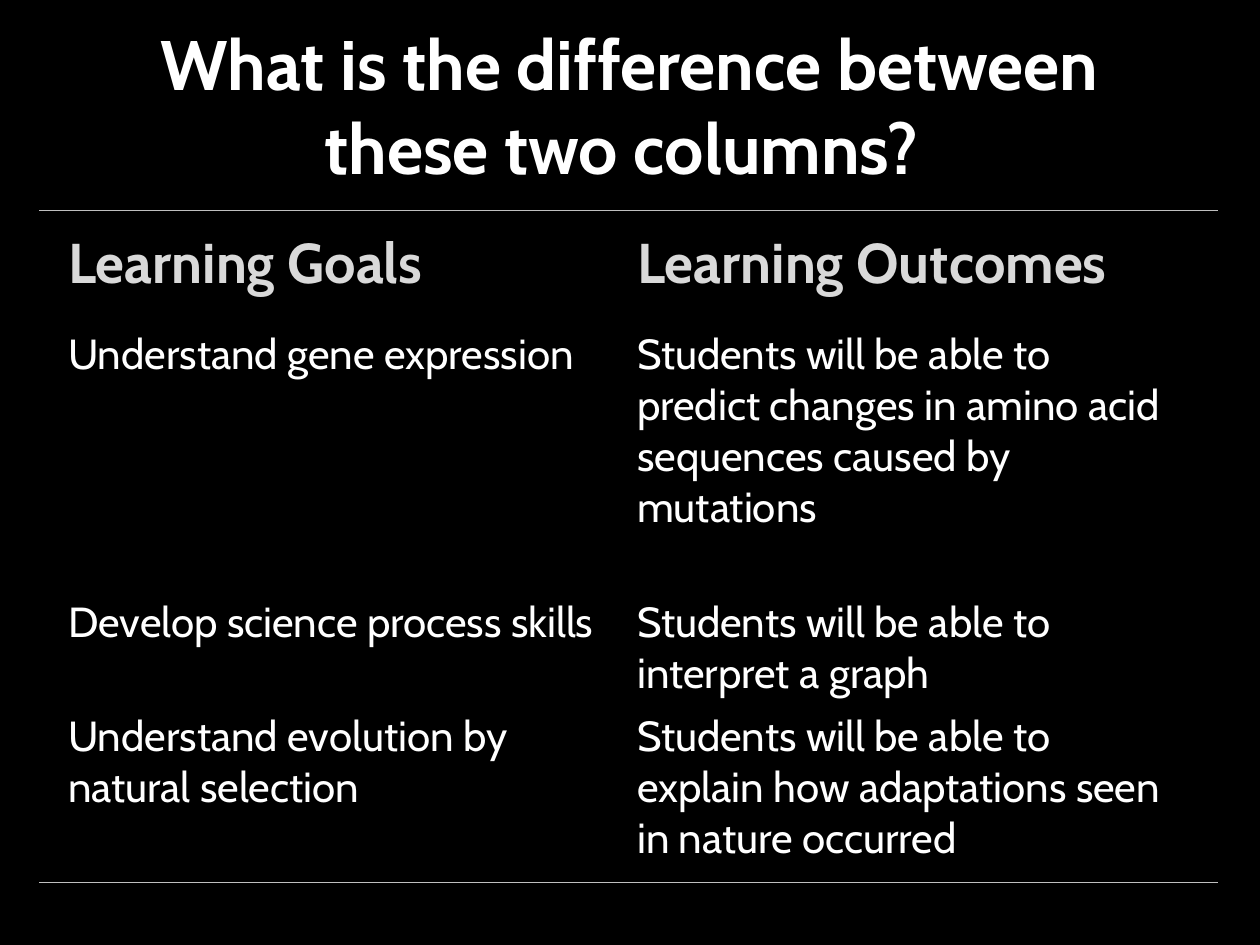
from dataclasses import dataclass

from lxml.etree import SubElement
from pptx import Presentation
from pptx.dml.color import RGBColor
from pptx.enum.shapes import MSO_CONNECTOR as Connector
from pptx.enum.text import MSO_ANCHOR as Anchor, PP_ALIGN as Align
from pptx.oxml.ns import qn
from pptx.util import Cm, Pt


def color(value):
    return RGBColor.from_string(value)


@dataclass
class SlideBuilder:
    slide: object
    font: str = "Cabin"
    background: str = "000000"
    text: str = "FFFFFF"
    heading: str = "D9D9D9"
    rule: str = "BFBFBF"

    def paint_background(self):
        fill = self.slide.background.fill
        fill.solid()
        fill.fore_color.rgb = color(self.background)

    def set_text(self, paragraph, text, size, value, bold=False):
        paragraph.text = text
        font = paragraph.font
        font.name, font.size, font.bold = self.font, Pt(size), bold
        font.color.rgb = color(value)

    def add_rule(self, left, top, width):
        line = self.slide.shapes.add_connector(
            Connector.STRAIGHT, Cm(left), Cm(top), Cm(left + width), Cm(top))
        line.line.color.rgb = color(self.rule)
        line.line.width = Pt(0.25)
        SubElement(line._element.spPr, qn("a:effectLst"))

    def add_title(self, text, left, top, width, height):
        frame = self.slide.shapes.add_textbox(
            Cm(left), Cm(top), Cm(width), Cm(height)).text_frame
        frame.word_wrap = True
        frame.vertical_anchor = Anchor.BOTTOM
        paragraph = frame.paragraphs[0]
        paragraph.alignment = Align.CENTER
        self.set_text(paragraph, text, 40, self.text, bold=True)

    def clear_cell(self, cell):
        properties = cell._tc.get_or_add_tcPr()
        for side in ("lnL", "lnR", "lnT", "lnB"):
            SubElement(SubElement(properties, qn(f"a:{side}")), qn("a:noFill"))
        cell.fill.background()

    def add_table(self, rows, heights, left, top, column_width):
        columns = len(rows[0])
        table = self.slide.shapes.add_table(
            len(rows), columns, Cm(left), Cm(top),
            Cm(column_width * columns), Cm(sum(heights))).table
        table.first_row = table.horz_banding = False
        for column in table.columns:
            column.width = Cm(column_width)
        for index, (texts, height) in enumerate(zip(rows, heights)):
            table.rows[index].height = Cm(height)
            style = (32, self.heading, True) if index == 0 else (24, self.text)
            for cell, text in zip(table.rows[index].cells, texts):
                self.clear_cell(cell)
                if text:
                    self.set_text(cell.text_frame.paragraphs[0], text, *style)


ROWS = [
    ("Learning Goals", "Learning Outcomes"),
    ("Understand gene expression",
     "Students will be able to predict changes in amino acid sequences "
     "caused by mutations"),
    ("Develop science process skills",
     "Students will be able to interpret a graph"),
    ("Understand evolution by natural selection",
     "Students will be able to explain how adaptations seen in nature "
     "occurred"),
    ("", ""),
]
HEIGHTS = [2, 5.4, 2.3, 3.35, 1.2]


def main():
    presentation = Presentation()
    presentation.slide_width, presentation.slide_height = Cm(25.4), Cm(19.05)
    builder = SlideBuilder(
        presentation.slides.add_slide(presentation.slide_layouts[6]))
    builder.paint_background()
    for top in (4.24, 17.78):
        builder.add_rule(0.79, top, 23.77)
    builder.add_title("What is the difference between these two columns? ",
                      1.78, 0.3, 21.82, 3.63)
    builder.add_table(ROWS, HEIGHTS, 1.12, 4.5, 11.47)
    presentation.save("out.pptx")


if __name__ == "__main__":
    main()
